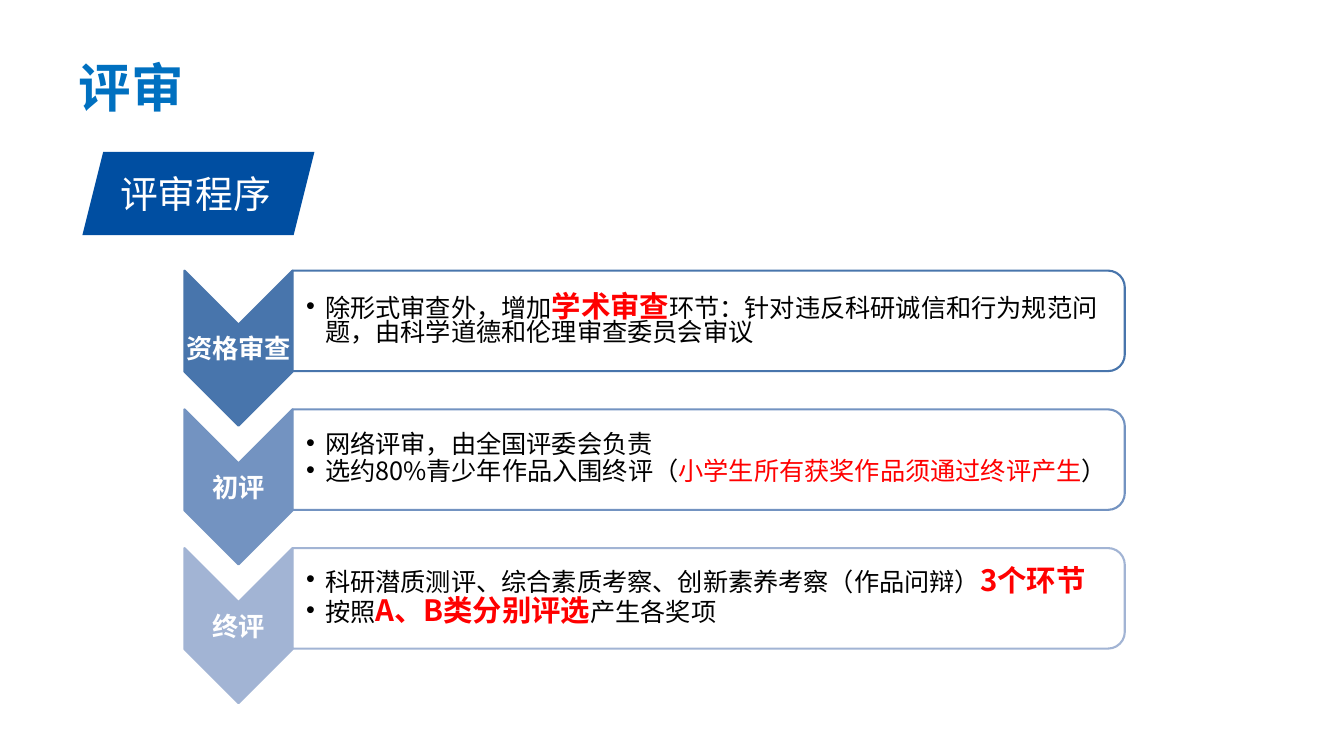
from dataclasses import dataclass

from lxml.etree import SubElement
from pptx import Presentation
from pptx.dml.color import RGBColor
from pptx.enum.shapes import MSO_SHAPE
from pptx.enum.text import MSO_ANCHOR, MSO_AUTO_SIZE, PP_ALIGN
from pptx.oxml.ns import qn
from pptx.util import Inches, Pt


@dataclass(frozen=True)
class Theme:
    font: str = "Noto Sans CJK SC"
    title: str = "0070C0"
    banner: str = "004EA1"
    light: str = "FFFFFF"
    ink: str = "000000"
    accent: str = "FF0000"
    title_size: int = 50
    banner_size: int = 36
    label_size: int = 25
    body_size: int = 24
    strong_size: int = 28


THEME = Theme()
WIDTH, HEIGHT = 17.78, 10

# Stage grid: a chevron column and a panel column, one row per stage
CHEVRON_LEFT, CHEVRON_WIDTH, CHEVRON_HEIGHT = 2.44, 1.43, 2.05
PANEL_LEFT, PANEL_WIDTH, PANEL_HEIGHT = 3.87, 11.01, 1.33
FIRST_ROW, ROW_STEP = 3.58, 3.67 / 2

# Kinds of text run: colour, size, bold
PLAIN = (THEME.ink, THEME.body_size, False)
RED = (THEME.accent, THEME.body_size, False)
STRONG = (THEME.accent, THEME.strong_size, True)

STAGES = [
    ("资格审查", "4875AC", [
        [("除形式审查外，增加", PLAIN), ("学术审查", STRONG),
         ("环节：针对违反科研诚信和行为规范问题，由科学道德和伦理审查委员会审议", PLAIN)],
    ]),
    ("初评", "7393C1", [
        [("网络评审，由全国评委会负责", PLAIN)],
        [("选约80%青少年作品入围终评（", PLAIN),
         ("小学生所有获奖作品须通过终评产生", RED), ("）", PLAIN)],
    ]),
    ("终评", "A2B4D4", [
        [("科研潜质测评、综合素质考察、创新素养考察（作品问辩）", PLAIN),
         ("3个环节", STRONG)],
        [("按照", PLAIN), ("A、B类分别评选", STRONG), ("产生各奖项", PLAIN)],
    ]),
]


def set_all(target, values):
    for name, value in values.items():
        setattr(target, name, value)


def place(shape, left, top, width, height):
    set_all(shape, {"left": Inches(left), "top": Inches(top),
                    "width": Inches(width), "height": Inches(height)})


def format_frame(frame, wrap=True, anchor=MSO_ANCHOR.MIDDLE, sides=(0.02, 0.02), ends=0.02):
    set_all(frame, {
        "auto_size": MSO_AUTO_SIZE.NONE, "word_wrap": wrap, "vertical_anchor": anchor,
        "margin_left": Inches(sides[0]), "margin_right": Inches(sides[1]),
        "margin_top": Inches(ends), "margin_bottom": Inches(ends)})


def add_run(paragraph, text, style):
    color, size, bold = style
    run = paragraph.add_run()
    run.text = text
    set_all(run.font, {"size": Pt(size), "bold": bold, "name": THEME.font})
    run.font.color.rgb = RGBColor.from_string(color)
    SubElement(run.font._element, qn("a:ea"), typeface=THEME.font)


def add_block(slide, kind, box, fill, line=None, turned=False):
    """Draw a filled shape; a turned one is rotated a quarter within its box."""
    left, top, width, height = box
    if turned:
        left, top = left + (width - height) / 2, top + (height - width) / 2
        width, height = height, width
    block = slide.shapes.add_shape(kind, *map(Inches, (left, top, width, height)))
    block.rotation = 90 if turned else 0
    block.shadow.inherit = False
    block.fill.solid()
    block.fill.fore_color.rgb = RGBColor.from_string(fill)
    if line:
        block.line.color.rgb = RGBColor.from_string(line)
        block.line.width = Pt(2)
    else:
        block.line.fill.background()
    return block


def add_label(slide, text, box, style, align, **frame_format):
    label = slide.shapes.add_textbox(*map(Inches, box))
    format_frame(label.text_frame, **frame_format)
    paragraph = label.text_frame.paragraphs[0]
    paragraph.alignment = align
    add_run(paragraph, text, style)


def fill_title(title, text):
    place(title, 0.94, 0.67, 16.25, 0.94)
    format_frame(title.text_frame, sides=(0.1, 0.1), ends=0.05)
    paragraph = title.text_frame.paragraphs[0]
    paragraph.alignment = PP_ALIGN.LEFT
    add_run(paragraph, text, (THEME.title, THEME.title_size, True))


def fill_list(body, items, top):
    place(body, 3.86, top, 10.95, 1.2)
    frame = body.text_frame
    format_frame(frame, sides=(0.19, 0.02))
    for number, item in enumerate(items):
        paragraph = frame.add_paragraph() if number else frame.paragraphs[0]
        properties = paragraph._p.get_or_add_pPr()
        properties.set("marL", str(Inches(0.25)))
        properties.set("indent", str(-Inches(0.25)))
        SubElement(properties, qn("a:buFont"), typeface="Arial")
        SubElement(properties, qn("a:buChar"), char="•")
        set_all(paragraph, {"alignment": PP_ALIGN.LEFT, "line_spacing": 0.74,
                            "space_before": Pt(0), "space_after": Pt(4)})
        for text, style in item:
            add_run(paragraph, text, style)


def add_stage(slide, row, body, name, color, items):
    top = FIRST_ROW + row * ROW_STEP
    # Chevron with its name
    add_block(slide, MSO_SHAPE.CHEVRON, (CHEVRON_LEFT, top, CHEVRON_WIDTH, CHEVRON_HEIGHT),
              color, color, turned=True)
    add_label(slide, name, (CHEVRON_LEFT, top + 0.72, CHEVRON_WIDTH, 0.61),
              (THEME.light, THEME.label_size, True), PP_ALIGN.CENTER, wrap=False)
    # Panel with its list in front
    panel = add_block(slide, MSO_SHAPE.ROUND_2_SAME_RECTANGLE,
                      (PANEL_LEFT, top, PANEL_WIDTH, PANEL_HEIGHT),
                      THEME.light, color, turned=True)
    fill_color = panel._element.spPr.find(qn("a:solidFill")).find(qn("a:srgbClr"))
    SubElement(fill_color, qn("a:alpha"), val="90000")
    panel._element.addnext(body._element)
    fill_list(body, items, top + 0.07)


def main():
    deck = Presentation()
    deck.slide_width, deck.slide_height = Inches(WIDTH), Inches(HEIGHT)
    slide = deck.slides.add_slide(deck.slide_layouts.get_by_name("Comparison"))
    title, *bodies = slide.placeholders

    fill_title(title, "评审")

    # Section banner
    add_block(slide, MSO_SHAPE.PARALLELOGRAM, (1.09, 2.01, 3.07, 1.1), THEME.banner)
    add_label(slide, "评审程序", (1.49, 2.2, 2.28, 0.71),
              (THEME.light, THEME.banner_size, False), PP_ALIGN.LEFT,
              wrap=False, sides=(0.1, 0.1), ends=0.05)

    # Review stages
    for row, (body, stage) in enumerate(zip(bodies, STAGES)):
        add_stage(slide, row, body, *stage)
    for spare in bodies[len(STAGES):]:
        spare._element.getparent().remove(spare._element)

    deck.save("out.pptx")


if __name__ == "__main__":
    main()
